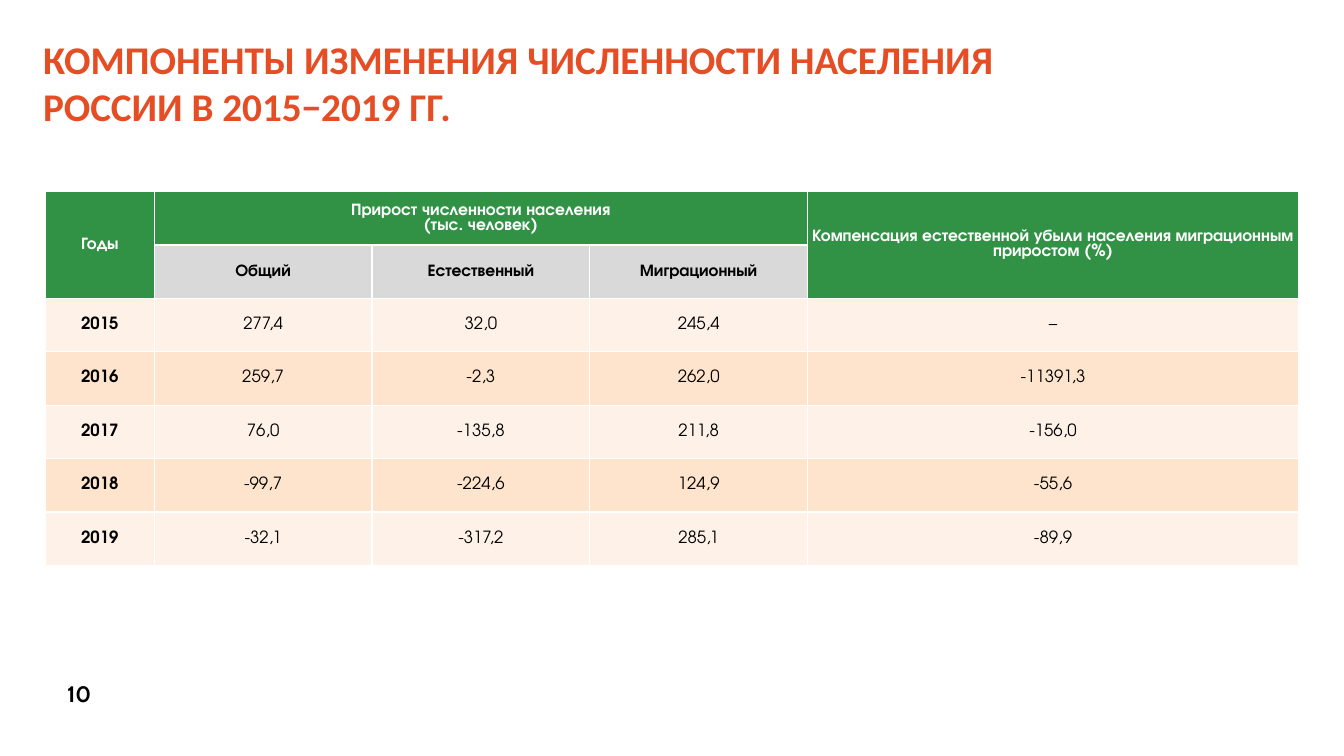
from lxml import etree
from pptx import Presentation
from pptx.dml.color import RGBColor
from pptx.enum import text as t
from pptx.oxml.ns import qn
from pptx.util import Inches, Pt

TITLE = "КОМПОНЕНТЫ ИЗМЕНЕНИЯ ЧИСЛЕННОСТИ НАСЕЛЕНИЯ\vРОССИИ В 2015−2019 ГГ."
PAGE = "10"
ROWS = [
    ["Годы", "Прирост численности населения\n(тыс. человек)", "", "",
     "Компенсация естественной убыли населения миграционным приростом (%)"],
    ["", "Общий", "Естественный", "Миграционный", ""],
    ["2015", "277,4", "32,0", "245,4", "–"],
    ["2016", "259,7", "-2,3", "262,0", "-11391,3"],
    ["2017", "76,0", "-135,8", "211,8", "-156,0"],
    ["2018", "-99,7", "-224,6", "124,9", "-55,6"],
    ["2019", "-32,1", "-317,2", "285,1", "-89,9"],
]
WIDTHS = [1.08, 2.16, 2.16, 2.16, 4.87]
HEIGHT = 0.53
MERGES = [((0, 0), (1, 0)), ((0, 1), (0, 3)), ((0, 4), (1, 4))]
GREEN, GREY, BANDS = "319144", "D9D9D9", ["FEF2E8", "FEE4CD"]
WHITE, BLACK, ORANGE = "FFFFFF", "000000", "E54D25"


def rgb(code):
    return RGBColor.from_string(code)


def write(frame, words, size=12, font="TeX Gyre Adventor", color=BLACK,
          bold=True, align=t.PP_ALIGN.CENTER, pitch=None):
    frame.word_wrap = True
    for i, line in enumerate(words.split("\n")):
        para = frame.add_paragraph() if i else frame.paragraphs[0]
        para.text = line
        para.alignment = align
        if pitch:
            para.line_spacing = Pt(pitch)
        for run in para.runs:
            run.font.size, run.font.name = Pt(size), font
            run.font.bold = bold
            run.font.color.rgb = rgb(color)


def edge(cell):
    """Give the cell thin white borders on all sides."""
    props = cell._tc.get_or_add_tcPr()
    for i, side in enumerate(("lnL", "lnR", "lnT", "lnB")):
        line = etree.Element(qn("a:" + side), w=str(Pt(1)))
        fill = etree.SubElement(line, qn("a:solidFill"))
        etree.SubElement(fill, qn("a:srgbClr"), val=WHITE)
        props.insert(i, line)


def box(slide, words, place, **look):
    frame = slide.shapes.add_textbox(*map(Inches, place)).text_frame
    write(frame, words, **look)


def grid(slide):
    """Add the table of population growth."""
    table = slide.shapes.add_table(
        len(ROWS), len(WIDTHS), Inches(0.45), Inches(1.9),
        Inches(sum(WIDTHS)), Inches(HEIGHT * len(ROWS))).table
    for col, width in zip(table.columns, WIDTHS):
        col.width = Inches(width)
    for r, row in enumerate(ROWS):
        table.rows[r].height = Inches(HEIGHT)
        for c, words in enumerate(row):
            cell = table.cell(r, c)
            top = r == 0 or (r == 1 and c in (0, 4))
            cell.fill.solid()
            cell.fill.fore_color.rgb = rgb(
                GREEN if top else GREY if r == 1 else BANDS[r % 2])
            edge(cell)
            cell.margin_left = cell.margin_right = Inches(0.04)
            cell.margin_top = cell.margin_bottom = 0
            cell.vertical_anchor = t.MSO_ANCHOR.MIDDLE
            write(cell.text_frame, words, color=WHITE if top else BLACK,
                  bold=r < 2 or c == 0, pitch=10.8)
    for first, last in MERGES:
        table.cell(*first).merge(table.cell(*last))


def main():
    deck = Presentation()
    deck.slide_width, deck.slide_height = Inches(13.33), Inches(7.5)
    slide = deck.slides.add_slide(deck.slide_layouts[6])
    box(slide, PAGE, (0.51, 6.7, 0.55, 0.37), size=16, font="Cabin")
    box(slide, TITLE, (0.33, 0.3, 10.92, 1.04), size=28, font="Calibri",
        color=ORANGE, align=t.PP_ALIGN.LEFT)
    grid(slide)
    deck.save("out.pptx")


if __name__ == "__main__":
    main()
